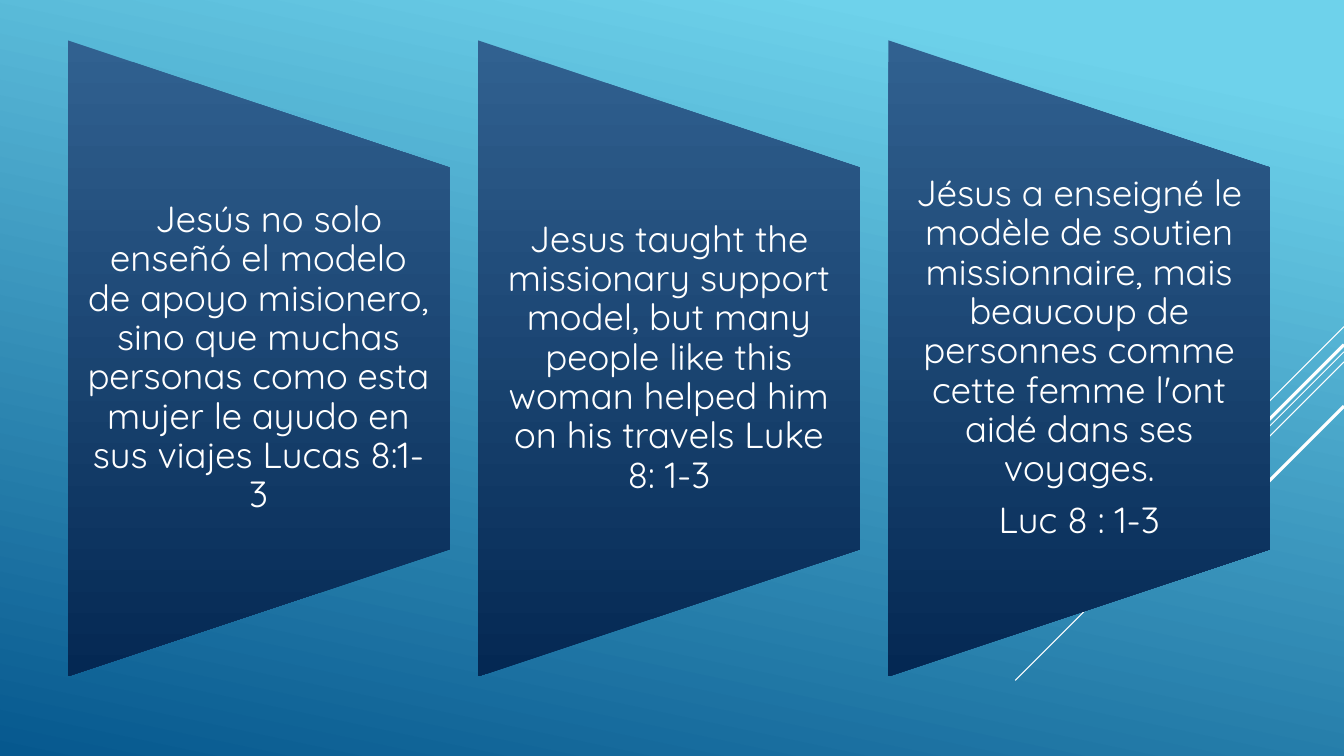
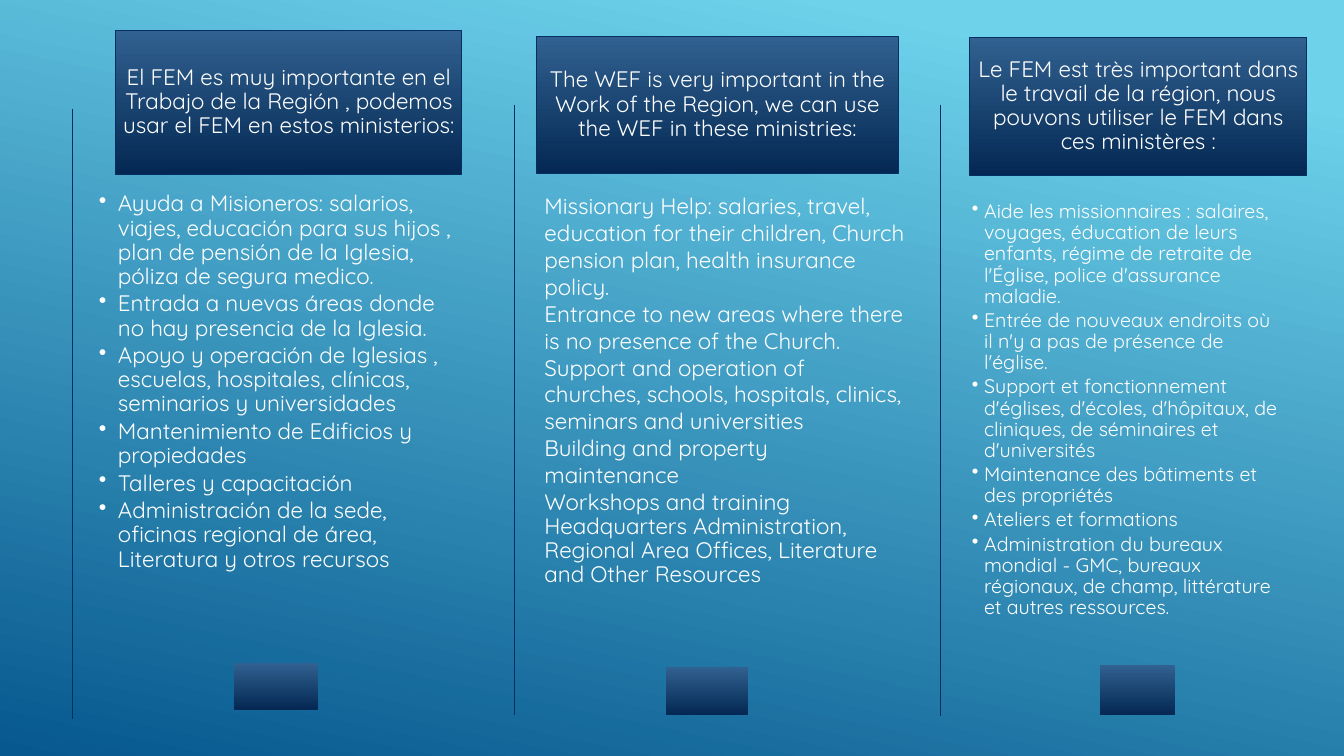
import pptx
import pptx.dml.color
import pptx.enum.shapes
import pptx.enum.text
import pptx.oxml.ns
import pptx.util
from lxml import etree

EMU_PER_PX = 9144
SHAPES = pptx.enum.shapes.MSO_SHAPE
ALIGN = pptx.enum.text.PP_ALIGN
ANCHOR = pptx.enum.text.MSO_ANCHOR
PAGE_WIDTH, PAGE_HEIGHT = 1333, 750


def px(length):
    return pptx.util.Emu(round(length * EMU_PER_PX))


def color(hex_string):
    return pptx.dml.color.RGBColor.from_string(hex_string)


def add_child(parent, tag, **attributes):
    return etree.SubElement(parent, pptx.oxml.ns.qn(tag), **attributes)


class Deck:
    """Holds the shared style and the slide being drawn."""

    FONT = "Quicksand"
    WHITE = "FFFFFF"
    NAVY = "052F61"
    PANEL = ((0, "316190"), (1, "042853"))
    SKY = ((0.1, "6ED2EB"), (1, "06588E"))

    def __init__(self):
        self.presentation = pptx.Presentation()
        self.presentation.slide_width = px(PAGE_WIDTH)
        self.presentation.slide_height = px(PAGE_HEIGHT)
        self.page = None

    def new_page(self):
        self.page = self.presentation.slides.add_slide(self.presentation.slide_layouts[6])
        self.gradient(self.page.background.fill, self.SKY, 102)

    def gradient(self, fill, stops, clockwise_angle):
        fill.gradient()
        fill.gradient_angle = 360 - clockwise_angle
        for stop, (position, shade) in zip(fill.gradient_stops, stops):
            stop.position = position
            stop.color.rgb = color(shade)

    def line(self, start, end, shade, width=0.75):
        connector = self.page.shapes.add_connector(
            pptx.enum.shapes.MSO_CONNECTOR.STRAIGHT, *map(px, start + end))
        connector.line.color.rgb = color(shade)
        connector.line.width = pptx.util.Pt(width)
        add_child(connector.element.spPr, "a:effectLst")

    def panel(self, place, kind=SHAPES.RECTANGLE, outlined=False):
        shape = self.page.shapes.add_shape(kind, *map(px, place))
        shape.shadow.inherit = False
        self.gradient(shape.fill, self.PANEL, 90)
        if outlined:
            shape.line.color.rgb = color(self.NAVY)
            shape.line.width = pptx.util.Pt(0.75)
        else:
            shape.line.fill.background()
        return shape

    def leaning_panel(self, left, top, width, height):
        """Draw a trapezoid that narrows to the right, shaded from top to bottom."""
        shift = (height - width) / 2
        shape = self.panel((left - shift, top + shift, height, width),
                           SHAPES.FLOWCHART_MANUAL_OPERATION)
        shape.rotation = 270
        shape.element.spPr.find(pptx.oxml.ns.qn("a:gradFill")).set("rotWithShape", "0")

    def text_box(self, place):
        return self.page.shapes.add_textbox(*map(px, place))

    def fill_text(self, box, texts, size, align=ALIGN.LEFT, anchor=ANCHOR.TOP,
                  margins=(4, 4), gap=0.35, spacing=0.9, bullet_indent=0):
        """Put paragraphs in a box; gap is a share of the text size."""
        frame = box.text_frame
        frame.word_wrap = True
        frame.vertical_anchor = anchor
        frame.margin_left = frame.margin_right = px(margins[0])
        frame.margin_top = frame.margin_bottom = px(margins[1])
        for index, text in enumerate(texts):
            para = frame.add_paragraph() if index else frame.paragraphs[0]
            para.text = text
            para.alignment = align
            para.line_spacing = spacing
            para.space_after = pptx.util.Pt(round(size * gap, 1))
            para.font.name = self.FONT
            para.font.size = pptx.util.Pt(size)
            para.font.color.rgb = color(self.WHITE)
            if bullet_indent:
                self.bullet(para, bullet_indent)
        return frame

    def indent(self, para, left, first_line):
        properties = para._p.get_or_add_pPr()
        properties.set("marL", str(px(left)))
        properties.set("indent", str(px(first_line)))
        return properties

    def bullet(self, para, width):
        add_child(self.indent(para, width, -width), "a:buChar", char="•")


# Top at the right edge, horizontal run, line width
DIAGONALS = ((324, 100, 0.75), (349, 326, 0.75), (359, 207, 0.75),
             (342, 191, 2.25), (403, 139, 2.25))

TEACHINGS = (
    ["Jesús no solo enseñó el modelo de apoyo misionero, sino que muchas personas "
     "como esta mujer le ayudo en sus viajes Lucas 8:1-3"],
    ["Jesus taught the missionary support model, but many people like this woman "
     "helped him on his travels Luke 8: 1-3"],
    ["Jésus a enseigné le modèle de soutien missionnaire, mais beaucoup de personnes "
     "comme cette femme l'ont aidé dans ses voyages.", "Luc 8 : 1-3"],
)

MINISTRIES = (
    {"rule": (72, 108, 713), "block": (232, 658, 83, 46), "header": (115, 30, 343, 143),
     "title": "El FEM es muy importante en el Trabajo de la Región , podemos usar el FEM "
              "en estos ministerios:",
     "body": (94, 187, 373, 489),
     "style": {"size": 16, "gap": 0.15, "bullet_indent": 19},
     "items": [
         "Ayuda a Misioneros: salarios, viajes, educación para sus hijos , plan de pensión "
         "de la Iglesia, póliza de segura medico.",
         "Entrada a nuevas áreas donde no hay presencia de la Iglesia.",
         "Apoyo y operación de Iglesias , escuelas, hospitales, clínicas, seminarios y "
         "universidades",
         "Mantenimiento de Edificios y propiedades",
         "Talleres y capacitación",
         "Administración de la sede, oficinas regional de área, Literatura y otros recursos"]},
    {"rule": (510, 104, 709), "block": (661, 662, 81, 47), "header": (532, 36, 359, 136),
     "title": "The WEF is very important in the Work of the Region, we can use the WEF in "
              "these ministries:",
     "body": (536, 187, 366, 313),
     "style": {"size": 16, "gap": 0, "spacing": 1.0},
     "items": [
         "Missionary Help: salaries, travel, education for their children, Church pension "
         "plan, health insurance policy.",
         "Entrance to new areas where there is no presence of the Church.",
         "Support and operation of churches, schools, hospitals, clinics, seminars and "
         "universities",
         "Building and property maintenance",
         "Workshops and training",
         "Headquarters Administration, Regional Area Offices, Literature and Other "
         "Resources"]},
    {"rule": (933, 104, 710), "block": (1091, 660, 74, 49), "header": (962, 37, 334, 137),
     "title": "Le FEM est très important dans le travail de la région, nous pouvons "
              "utiliser le FEM dans ces ministères :",
     "body": (960, 196, 318, 313),
     "style": {"size": 14, "gap": 0.15, "bullet_indent": 12},
     "items": [
         "Aide les missionnaires : salaires, voyages, éducation de leurs enfants, régime "
         "de retraite de l'Église, police d'assurance maladie.",
         "Entrée de nouveaux endroits où il n'y a pas de présence de l'église.",
         "Support et fonctionnement d'églises, d'écoles, d'hôpitaux, de cliniques, de "
         "séminaires et d'universités",
         "Maintenance des bâtiments et des propriétés",
         "Ateliers et formations",
         "Administration du bureaux mondial - GMC, bureaux régionaux, de champ, "
         "littérature et autres ressources."]},
)


def teaching_page(deck):
    deck.new_page()
    for top, run, width in DIAGONALS:
        deck.line((PAGE_WIDTH, top), (PAGE_WIDTH - run, top + run), deck.WHITE, width)
    side, height, pitch = 379, 631, 407
    frames = []
    for column, texts in enumerate(TEACHINGS):
        left = 67 + column * pitch
        deck.leaning_panel(left, 40, side, height)
        box = deck.text_box((left, 166, side, side))
        frames.append(deck.fill_text(box, texts, 26, ALIGN.CENTER, ANCHOR.MIDDLE, (18, 0)))
    deck.indent(frames[0].paragraphs[0], 0, 20)


def ministries_page(deck):
    deck.new_page()
    for column in MINISTRIES:
        x, top, bottom = column["rule"]
        deck.line((x, top), (x, bottom), deck.NAVY)
        deck.panel(column["block"])
        frame = deck.fill_text(deck.text_box(column["body"]), column["items"],
                               **column["style"])
        if "spacing" in column["style"]:
            frame.paragraphs[-1].line_spacing = 0.9
        header = deck.panel(column["header"], outlined=True)
        deck.fill_text(header, [column["title"]], 16, ALIGN.CENTER, ANCHOR.MIDDLE)


def main():
    deck = Deck()
    teaching_page(deck)
    ministries_page(deck)
    deck.presentation.save("out.pptx")


if __name__ == "__main__":
    main()
